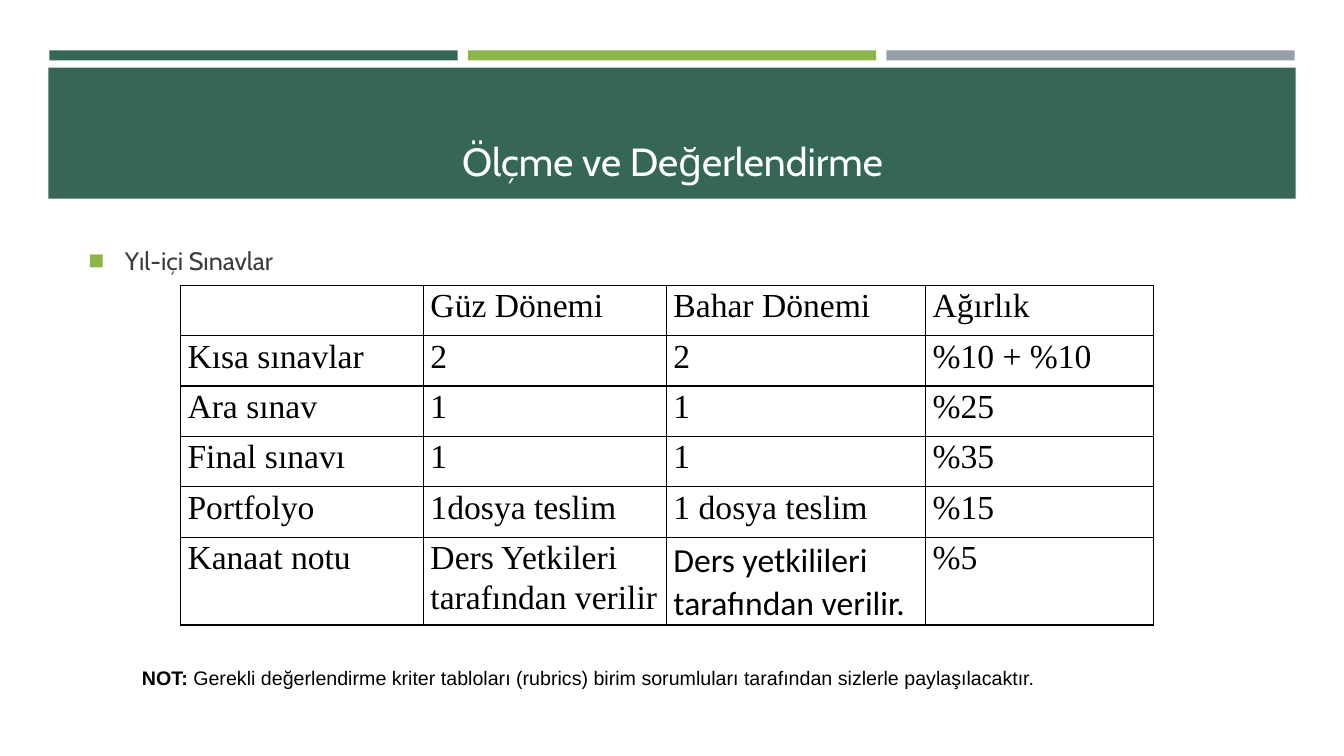
from lxml.etree import SubElement
from pptx import Presentation
from pptx.dml.color import RGBColor
from pptx.enum.shapes import MSO_SHAPE
from pptx.enum.text import MSO_ANCHOR, PP_ALIGN
from pptx.oxml.ns import qn
from pptx.util import Inches, Pt

WIDTH, HEIGHT = 13.33, 7.5
GREEN, LIME, GRAY = "366658", "8CB64A", "969FA7"
BLACK, WHITE, DARK = "000000", "FFFFFF", "3D3D3D"

# Three accent bars share one column grid
BAR_LEFT, BAR_PITCH, BAR_WIDTH = 0.49, 4.15, 4.05
CONTENT_LEFT, CONTENT_WIDTH = 0.64, 12.06

COLUMN_WIDTHS = [2.41, 2.41, 2.57, 2.26]
ROW_HEIGHT, LAST_ROW_HEIGHT = 0.5, 0.87
ASSESSMENTS = [
    ["", "Güz Dönemi", "Bahar Dönemi", "Ağırlık"],
    ["Kısa sınavlar", "2", "2", "%10 + %10"],
    ["Ara sınav", "1", "1", "%25"],
    ["Final sınavı", "1", "1", "%35"],
    ["Portfolyo", "1dosya teslim", "1 dosya teslim", "%15"],
    ["Kanaat notu", "Ders Yetkileri tarafından verilir",
     "Ders yetkilileri tarafından verilir.", "%5"],
]
CALIBRI_CELL = (5, 2)


def color(value):
    return RGBColor.from_string(value)


def style(span, font, size, fill, bold=False):
    span.font.name = font
    span.font.size = Pt(size)
    span.font.bold = bold
    span.font.color.rgb = color(fill)


def add_bar(page, left, top, width, height, fill):
    bar = page.shapes.add_shape(MSO_SHAPE.RECTANGLE, Inches(left), Inches(top),
                                Inches(width), Inches(height))
    bar.shadow.inherit = False
    bar.fill.solid()
    bar.fill.fore_color.rgb = color(fill)
    bar.line.fill.background()


def add_text(page, left, top, width, height, text, font, size, fill):
    box = page.shapes.add_textbox(Inches(left), Inches(top),
                                  Inches(width), Inches(height))
    frame = box.text_frame
    frame.word_wrap = True
    frame.text = text
    para = frame.paragraphs[0]
    style(para.runs[0], font, size, fill)
    return frame, para


def add_bullet(para, symbol, fill):
    props = para._p.get_or_add_pPr()
    props.set("marL", str(Inches(0.5)))
    props.set("indent", str(Inches(-0.36)))
    bullet_color = SubElement(props, qn("a:buClr"))
    SubElement(bullet_color, qn("a:srgbClr"), val=fill)
    SubElement(props, qn("a:buFont"), typeface="Arial")
    SubElement(props, qn("a:buChar"), char=symbol)


def add_borders(cell):
    props = cell._tc.get_or_add_tcPr()
    for position, side in enumerate(("a:lnL", "a:lnR", "a:lnT", "a:lnB")):
        line = SubElement(props, qn(side), w=str(Pt(1)))
        fill = SubElement(line, qn("a:solidFill"))
        SubElement(fill, qn("a:srgbClr"), val=BLACK)
        props.insert(position, line)


def fill_cell(cell, text, font):
    cell.fill.background()
    cell.margin_left = cell.margin_right = Inches(0.07)
    cell.margin_top = cell.margin_bottom = 0
    add_borders(cell)
    cell.text = text
    para = cell.text_frame.paragraphs[0]
    para.line_spacing = 1.07
    for span in para.runs:
        style(span, font, 24, BLACK)


def add_assessment_table(page, left, top):
    heights = [ROW_HEIGHT] * (len(ASSESSMENTS) - 1) + [LAST_ROW_HEIGHT]
    table = page.shapes.add_table(
        len(heights), len(COLUMN_WIDTHS), Inches(left), Inches(top),
        Inches(sum(COLUMN_WIDTHS)), Inches(sum(heights))).table
    table.first_row = table.horz_banding = False
    for column, width in zip(table.columns, COLUMN_WIDTHS):
        column.width = Inches(width)
    for row, height in zip(table.rows, heights):
        row.height = Inches(height)
    for r, texts in enumerate(ASSESSMENTS):
        for c, text in enumerate(texts):
            font = "Calibri" if (r, c) == CALIBRI_CELL else "Times New Roman"
            fill_cell(table.cell(r, c), text, font)


def main():
    deck = Presentation()
    deck.slide_width, deck.slide_height = Inches(WIDTH), Inches(HEIGHT)
    page = deck.slides.add_slide(deck.slide_layouts[6])

    # Accent bars and title band
    for index, fill in enumerate((GREEN, LIME, GRAY)):
        add_bar(page, BAR_LEFT + index * BAR_PITCH, 0.5, BAR_WIDTH, 0.1, fill)
    add_bar(page, 0.48, 0.67, 12.37, 1.3, GREEN)

    # Title
    frame, para = add_text(page, CONTENT_LEFT, 0.77, CONTENT_WIDTH, 1.11,
                           "Ölçme ve Değerlendirme", "Cabin", 28, WHITE)
    frame.vertical_anchor = MSO_ANCHOR.BOTTOM
    para.alignment = PP_ALIGN.CENTER

    # Bulleted heading
    frame, para = add_text(page, CONTENT_LEFT, 2.38, CONTENT_WIDTH, 0.45,
                           "Yıl-içi Sınavlar", "Cabin", 18, DARK)
    para.space_before = Pt(3.6)
    add_bullet(para, "◼", LIME)

    # Assessment table
    add_assessment_table(page, 1.79, 2.83)

    # Note
    frame, para = add_text(page, 1.31, 6.56, 10.29, 0.34, "NOT: ", "Arial", 14, BLACK)
    para.runs[0].font.bold = True
    span = para.add_run()
    span.text = ("Gerekli değerlendirme kriter tabloları (rubrics) birim "
                 "sorumluları tarafından sizlerle paylaşılacaktır.")
    style(span, "Arial", 14, BLACK)

    deck.save("out.pptx")


if __name__ == "__main__":
    main()
